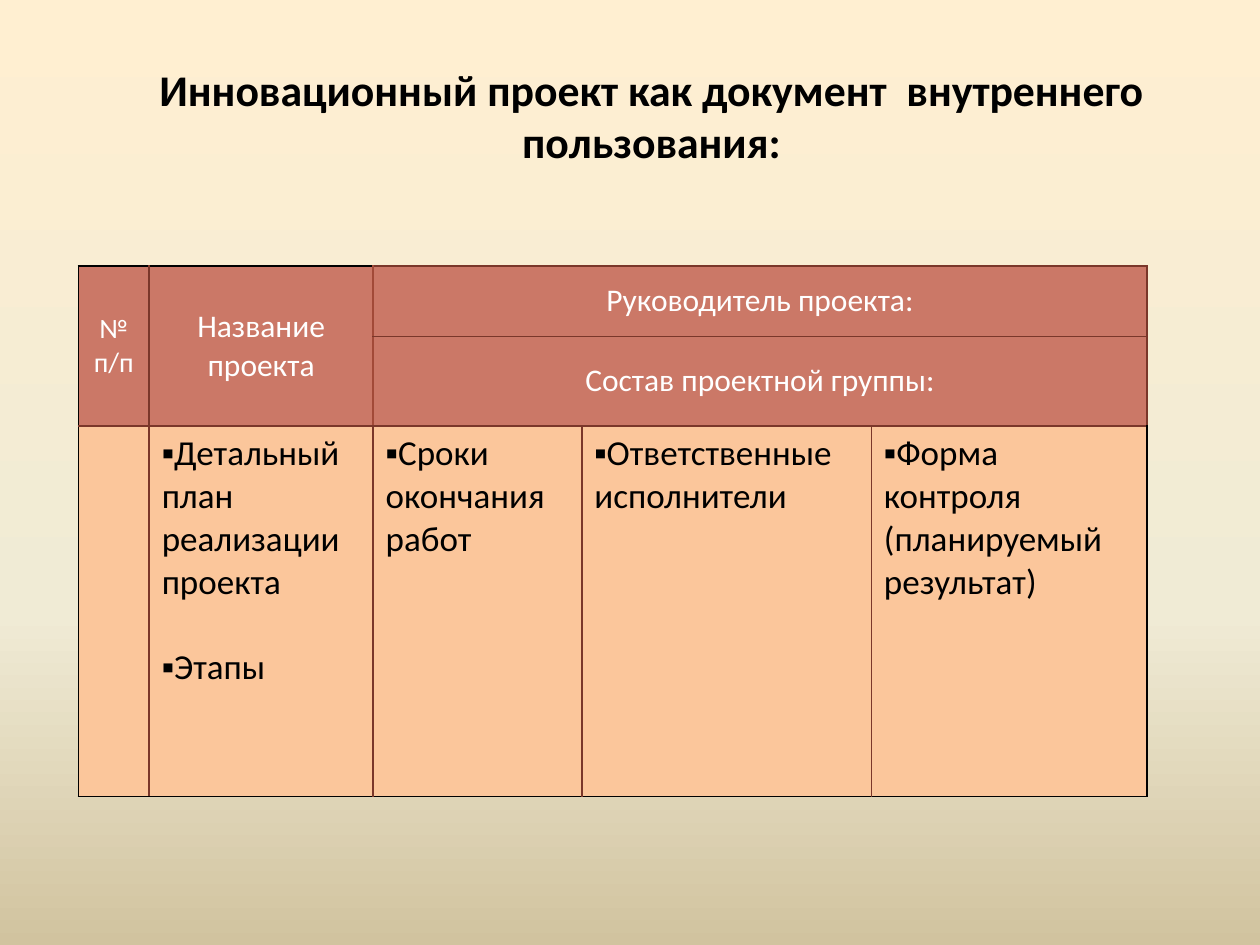
"""Builds a slide with a table that outlines an innovation project document."""
from lxml import etree
from pptx import Presentation
from pptx.dml.color import RGBColor
from pptx.enum.text import MSO_ANCHOR, PP_ALIGN
from pptx.oxml.ns import qn
from pptx.util import Pt

CENTER, LEFT, JUSTIFY = PP_ALIGN.CENTER, PP_ALIGN.LEFT, PP_ALIGN.JUSTIFY
TOP, MIDDLE = MSO_ANCHOR.TOP, MSO_ANCHOR.MIDDLE

FONT = "Calibri"
COLORS = {"black": "000000", "white": "FFFFFF", "header": "CB7867",
          "body": "FBC69B", "line": "7A372A", "divider": "A24A38"}
BACKGROUND = [(0, "FFEFD1"), (65, "F0EBD5"), (100, "D1C39F")]

TITLE = "Инновационный проект как документ  внутреннего пользования:"
HEADERS = [
    {"start": (0, 0), "end": (1, 0), "text": ["№", "п/п"], "size": 16},
    {"start": (0, 1), "end": (1, 1), "text": ["Название проекта"], "size": 18},
    {"start": (0, 2), "end": (0, 4), "text": ["Руководитель проекта:"], "size": 18},
    {"start": (1, 2), "end": (1, 4), "text": ["Состав проектной группы:"], "size": 18},
]
BODY = [
    ([], JUSTIFY),
    (["Детальный план реализации проекта", "Этапы"], JUSTIFY),
    (["Сроки окончания работ"], LEFT),
    (["Ответственные исполнители"], JUSTIFY),
    (["Форма контроля (планируемый результат)"], JUSTIFY),
]
COLUMNS = [40.5, 128, 119.25, 165.5, 157.5]
ROWS = [40.25, 51.25, 211.75]
LAST_ROW, LAST_COL = len(ROWS) - 1, len(COLUMNS) - 1


def write(tf, text, size=20, color="black", bold=False, align=LEFT, bullet=None, gap=0):
    for i, line in enumerate(text):
        p = tf.paragraphs[0] if i == 0 else tf.add_paragraph()
        p.alignment = align
        if i and gap:
            p.space_before = Pt(gap)
        if bullet:
            pPr = p._p.get_or_add_pPr()
            pPr.set("marL", "0")
            pPr.set("indent", "0")
            etree.SubElement(pPr, qn("a:buFont"), typeface=FONT)
            etree.SubElement(pPr, qn("a:buChar"), char=bullet)
        r = p.add_run()
        r.text = line
        r.font.name, r.font.size, r.font.bold = FONT, Pt(size), bold
        r.font.color.rgb = RGBColor.from_string(COLORS[color])


def set_background(s):
    fill = s.background.fill
    fill.gradient()
    fill.gradient_angle = 270
    stops = next(s._element.iter(qn("a:gsLst")))
    stops.clear()
    for position, color in BACKGROUND:
        stop = etree.SubElement(stops, qn("a:gs"), pos=str(position * 1000))
        etree.SubElement(stop, qn("a:srgbClr"), val=color)


def border_colors(row, col):
    header = row < LAST_ROW
    left = "black" if col == 0 else "divider" if header and col == 2 else "line"
    right = "black" if row and col == LAST_COL else "divider" if header and col == 1 else "line"
    top = "black" if row == 0 and col < 2 else "line"
    bottom = "line" if header else "black"
    return {"L": left, "R": right, "T": top, "B": bottom}


def style_cell(cell, row, col):
    tcPr = cell._tc.get_or_add_tcPr()
    for side, color in border_colors(row, col).items():
        ln = etree.SubElement(tcPr, qn(f"a:ln{side}"), w=str(Pt(1)))
        solid = etree.SubElement(ln, qn("a:solidFill"))
        etree.SubElement(solid, qn("a:srgbClr"), val=COLORS[color])
    cell.fill.solid()
    cell.fill.fore_color.rgb = RGBColor.from_string(
        COLORS["header" if row < LAST_ROW else "body"])
    cell.vertical_anchor = MIDDLE if row < LAST_ROW else TOP


def add_project_table(s):
    table = s.shapes.add_table(len(ROWS), len(COLUMNS), Pt(44.75), Pt(152),
                               Pt(sum(COLUMNS)), Pt(sum(ROWS))).table
    for column, width in zip(table.columns, COLUMNS):
        column.width = Pt(width)
    for row, height in enumerate(ROWS):
        table.rows[row].height = Pt(height)
        for col in range(len(COLUMNS)):
            style_cell(table.cell(row, col), row, col)
    for header in HEADERS:
        cell = table.cell(*header["start"])
        cell.merge(table.cell(*header["end"]))
        write(cell.text_frame, header["text"], size=header["size"],
              color="white", align=CENTER)
    for col, (text, align) in enumerate(BODY):
        write(table.cell(LAST_ROW, col).text_frame, text, align=align,
              bullet="▪", gap=24.4)


def main():
    prs = Presentation()
    prs.slide_width, prs.slide_height = Pt(720), Pt(540)
    s = prs.slides.add_slide(prs.slide_layouts[6])
    set_background(s)
    tf = s.shapes.add_textbox(Pt(48.25), Pt(20.75), Pt(648), Pt(90)).text_frame
    tf.word_wrap, tf.vertical_anchor = True, MIDDLE
    write(tf, [TITLE], size=25, bold=True, align=CENTER)
    add_project_table(s)
    prs.save("out.pptx")


if __name__ == "__main__":
    main()
